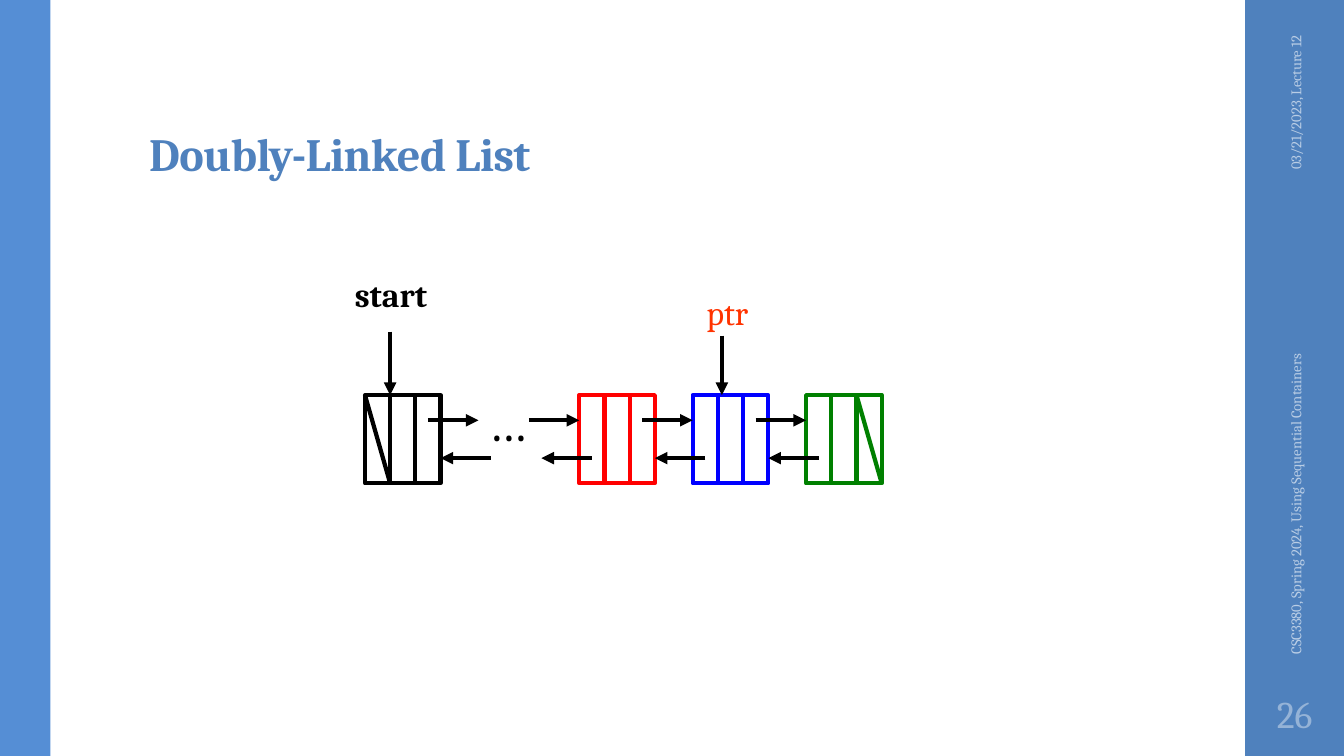
from lxml import etree
from pptx import Presentation
from pptx.dml.color import RGBColor
from pptx.enum.shapes import MSO_CONNECTOR, MSO_SHAPE
from pptx.enum.text import MSO_ANCHOR, MSO_AUTO_SIZE, PP_ALIGN
from pptx.oxml.ns import qn
from pptx.util import Inches, Pt

COLORS = {
    "white": "FFFFFF", "black": "000000", "red": "FF0000", "blue": "0000FF",
    "green": "008000", "pointer": "FF3300", "accent": "4F81BD",
    "stripe": "558ED5", "footer": "B9CDE5", "number": "95B3D7",
}
FONT = "Cambria"
LINE_WIDTH = 3
NODE_W, NODE_H = 0.75, 0.875
CELL_W = NODE_W / 3
ARROW = 0.5


def rgb(name):
    return RGBColor.from_string(COLORS[name])


def place(sp, box):
    sp.left, sp.top, sp.width, sp.height = (Inches(v) for v in box)


def write(sp, text, size, color, bold=False, align=PP_ALIGN.LEFT,
          anchor=MSO_ANCHOR.TOP, insets=(0.1, 0.05, 0.1, 0.05)):
    tf = sp.text_frame
    tf.word_wrap = True
    tf.auto_size = MSO_AUTO_SIZE.NONE
    tf.vertical_anchor = anchor
    tf.margin_left, tf.margin_top, tf.margin_right, tf.margin_bottom = (
        Inches(v) for v in insets)
    p = tf.paragraphs[0]
    p.alignment = align
    r = p.add_run()
    r.text = text
    r.font.name, r.font.size, r.font.bold = FONT, Pt(size), bold
    r.font.color.rgb = rgb(color)
    return p


def add_text(s, box, text, size, color, rotation=0, **fmt):
    sp = s.shapes.add_textbox(*(Inches(v) for v in box))
    sp.rotation = rotation
    write(sp, text, size, color, **fmt)


def add_rect(s, box, fill=None, line=None):
    sp = s.shapes.add_shape(MSO_SHAPE.RECTANGLE, *(Inches(v) for v in box))
    sp.shadow.inherit = False
    if fill:
        sp.fill.solid()
        sp.fill.fore_color.rgb = rgb(fill)
    else:
        sp.fill.background()
    if line:
        sp.line.color.rgb = rgb(line)
        sp.line.width = Pt(LINE_WIDTH)
    else:
        sp.line.fill.background()


def add_line(s, x1, y1, x2, y2, color="black", arrow=False):
    c = s.shapes.add_connector(MSO_CONNECTOR.STRAIGHT,
                               *(Inches(v) for v in (x1, y1, x2, y2)))
    c.line.color.rgb = rgb(color)
    c.line.width = Pt(LINE_WIDTH)
    if arrow:
        etree.SubElement(c.line._get_or_add_ln(), qn("a:tailEnd"), type="triangle")
    etree.SubElement(c._element.spPr, qn("a:effectLst"))


def add_title(s, box):
    sp = s.shapes.title
    place(sp, box)
    p = write(sp, "Doubly-Linked List", 33, "accent", bold=True,
              anchor=MSO_ANCHOR.BOTTOM, insets=(0.1, 0.03, 0.1, 0.05))
    p.line_spacing = 0.9
    p.runs[0].font._element.set("spc", "-40")


def add_sidebar(s, x, y, w, h):
    add_rect(s, (x, y, w, h), fill="accent")
    middle = MSO_ANCHOR.MIDDLE
    add_text(s, (x - 0.54, y + 1.09, 2.08, 0.4), "03/21/2023, Lecture 12",
             10.5, "footer", rotation=270, align=PP_ALIGN.RIGHT, anchor=middle)
    add_text(s, (x - 1.46, y + 4.43, 3.92, 0.4),
             "CSC3380, Spring 2024, Using Sequential Containers",
             10.5, "footer", rotation=270, anchor=middle)
    add_text(s, (x, y + h - 0.75, w, 0.65), "26", 27, "number",
             align=PP_ALIGN.CENTER, anchor=middle, insets=(0.05,) * 4)


def add_node(s, x, y, color, fill="white", null_cell=None):
    """Draw a three-cell node; null_cell is the cell with a diagonal."""
    add_rect(s, (x, y, NODE_W, NODE_H), fill=fill, line=color)
    for i in (1, 2):
        add_line(s, x + i * CELL_W, y, x + i * CELL_W, y + NODE_H, color)
    if null_cell is not None:
        left = x + null_cell * CELL_W
        add_line(s, left, y, left + CELL_W, y + NODE_H, color)


def add_linked_list(s, x, y):
    red_x, blue_x, green_x = (x + 2.125 + i * 1.125 for i in range(3))

    # Nodes
    add_node(s, x, y, "black", null_cell=0)
    add_node(s, red_x, y, "red", fill=None)
    add_node(s, blue_x, y, "blue")
    add_node(s, green_x, y, "green", null_cell=2)

    # Forward and backward links
    next_y, prev_y = y + 0.25, y + 0.625
    for start in (x + 0.625, red_x - ARROW, red_x + 0.625, blue_x + 0.625):
        add_line(s, start, next_y, start + ARROW, next_y, arrow=True)
    for end in (x + NODE_W, red_x - 0.375, red_x + NODE_W, blue_x + NODE_W):
        add_line(s, end + ARROW, prev_y, end, prev_y, arrow=True)
    add_text(s, (x + 1.125, y - 0.09, 0.62, 0.5), "…", 36, "black")

    # Labels and their pointers
    add_text(s, (x - 0.2, y - 1.25, 1.71, 0.75), "start", 24, "black", bold=True)
    add_line(s, x + CELL_W, y - 0.63, x + CELL_W, y, arrow=True)
    add_text(s, (blue_x + 0.04, y - 1.07, 1.5, 0.5), "ptr", 24, "pointer")
    add_line(s, blue_x + 0.29, y - 0.59, blue_x + 0.29, y, arrow=True)


def main():
    prs = Presentation()
    prs.slide_width, prs.slide_height = Inches(13.33), Inches(7.5)
    s = prs.slides.add_slide(prs.slide_layouts[5])
    s.background.fill.solid()
    s.background.fill.fore_color.rgb = rgb("white")
    add_rect(s, (0, 0, 0.5, 7.5), fill="stripe")
    add_sidebar(s, 12.35, 0, 0.98, 7.5)
    add_title(s, (1.38, 0.32, 10.6, 1.53))
    add_linked_list(s, 3.62, 3.92)
    prs.save("out.pptx")


if __name__ == "__main__":
    main()
